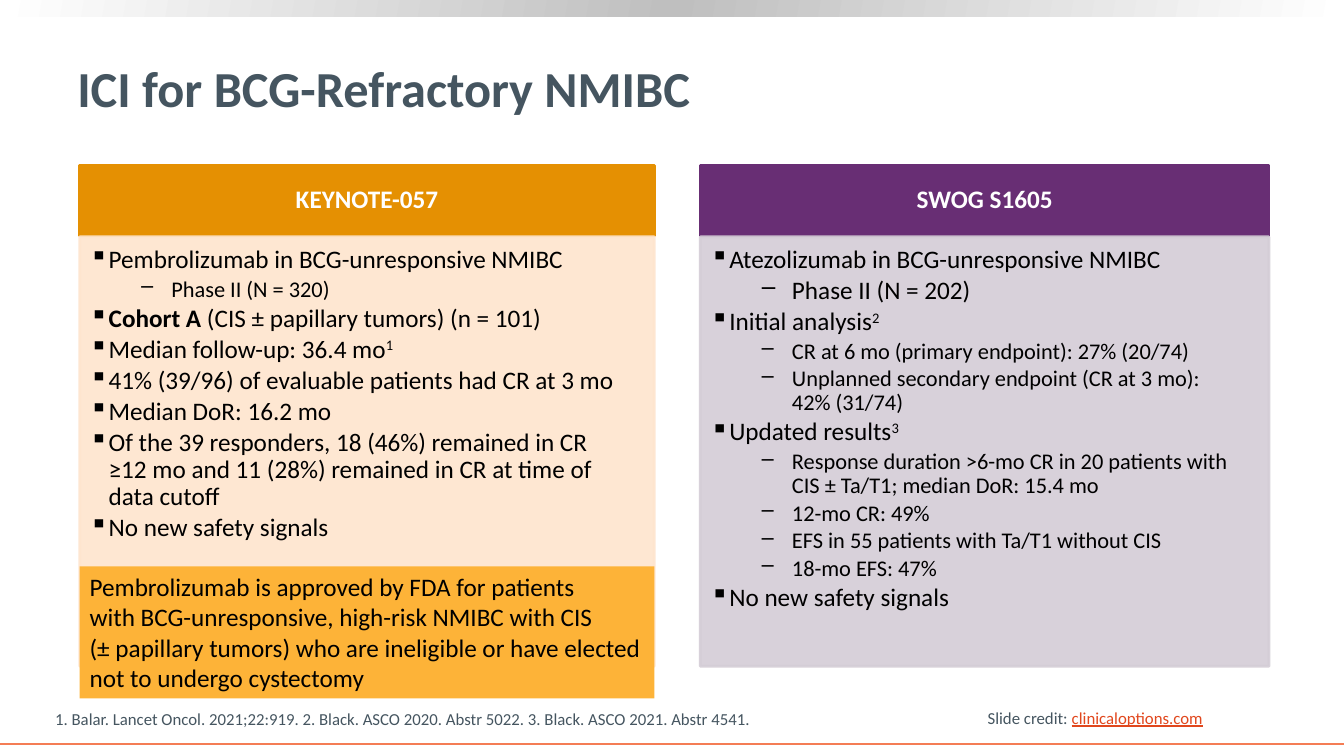
from lxml import etree
from pptx import Presentation
from pptx import util as u
from pptx.dml.color import RGBColor
from pptx.enum import shapes, text
from pptx.oxml import ns

FONT = "Calibri"
SLATE = "455560"
BULLETS = {1: ("▪", 0.48, 0.48), 2: ("‒", 2.06, 0.79)}
SUPERSCRIPT = {"superscript": True}

KEYNOTE_ITEMS = [
    (1, 18, [("Pembrolizumab in BCG-unresponsive NMIBC", {})]),
    (2, 16, [("Phase II (N = 320)", {})]),
    (1, 18, [("Cohort A ", {"bold": True}), ("(CIS ± papillary tumors) (n = 101)", {})]),
    (1, 18, [("Median follow-up: 36.4 mo", {}), ("1", SUPERSCRIPT)]),
    (1, 18, [("41% (39/96) of evaluable patients had CR at 3 mo", {})]),
    (1, 18, [("Median DoR: 16.2 mo", {})]),
    (1, 18, [("Of the 39 responders, 18 (46%) remained in CR \n"
              "≥12 mo and 11 (28%) remained in CR at time of data cutoff", {})]),
    (1, 18, [("No new safety signals", {})]),
]
SWOG_ITEMS = [
    (1, 18, [("Atezolizumab in BCG-unresponsive NMIBC", {})]),
    (2, 18, [("Phase II (N = 202)", {})]),
    (1, 18, [("Initial analysis", {}), ("2", SUPERSCRIPT)]),
    (2, 16, [("CR at 6 mo (primary endpoint): 27% (20/74)", {})]),
    (2, 16, [("Unplanned secondary endpoint (CR at 3 mo): \n42% (31/74)", {})]),
    (1, 18, [("Updated results", {}), ("3", SUPERSCRIPT)]),
    (2, 16, [("Response duration >6-mo CR in 20 patients with "
              "CIS ± Ta/T1; median DoR: 15.4 mo", {})]),
    (2, 16, [("12-mo CR: 49%", {})]),
    (2, 16, [("EFS in 55 patients with Ta/T1 without CIS", {})]),
    (2, 16, [("18-mo EFS: 47%", {})]),
    (1, 18, [("No new safety signals", {})]),
]
APPROVAL = ("Pembrolizumab is approved by FDA for patients \n"
            "with BCG-unresponsive, high-risk NMIBC with CIS \n"
            "(± papillary tumors) who are ineligible or have elected not to undergo cystectomy")
REFERENCES = ("1. Balar. Lancet Oncol.\u00a02021;22:919. 2. Black. ASCO 2020. Abstr 5022. "
              "3. Black. ASCO 2021. Abstr 4541.")


def color(value):
    return RGBColor.from_string(value)


def add_text(paragraph, content, size=18, hex_color="000000", bold=False,
             underline=False, superscript=False):
    for index, line in enumerate(content.split("\n")):
        if index:
            paragraph.add_line_break()
        run = paragraph.add_run()
        run.text = line
        run.font.name = FONT
        run.font.size = u.Pt(size)
        run.font.bold = bold
        run.font.underline = underline
        run.font.color.rgb = color(hex_color)
        if superscript:
            run._r.get_or_add_rPr().set("baseline", "30000")


def set_frame(shape, anchor=text.MSO_ANCHOR.TOP, insets=(0.25, 0.13, 0.25, 0.13), wrap=True):
    frame = shape.text_frame
    frame.word_wrap = wrap
    frame.vertical_anchor = anchor
    frame.margin_left, frame.margin_top, frame.margin_right, frame.margin_bottom = map(u.Cm, insets)
    paragraph = frame.paragraphs[0]
    paragraph.alignment = text.PP_ALIGN.LEFT
    return paragraph


def add_text_box(slide, box, **frame_format):
    shape = slide.shapes.add_textbox(*map(u.Cm, box))
    return set_frame(shape, **frame_format)


def add_rectangle(slide, box, fill, outlined=False, opacity=100):
    shape = slide.shapes.add_shape(shapes.MSO_SHAPE.RECTANGLE, *map(u.Cm, box))
    shape.shadow.inherit = False
    shape.fill.solid()
    shape.fill.fore_color.rgb = color(fill)
    if outlined:
        shape.line.color.rgb = color(fill)
        shape.line.width = u.Pt(2)
    else:
        shape.line.fill.background()
    if opacity < 100:
        for element in shape._element.spPr.iter(ns.qn("a:srgbClr")):
            etree.SubElement(element, ns.qn("a:alpha")).set("val", str(opacity * 1000))
    return shape


def add_top_band(slide):
    band = add_rectangle(slide, (0, 0, 33.87, 0.41), "BFBFBF")
    band.fill.gradient()
    gradient = band._element.spPr.find(ns.qn("a:gradFill"))
    for child in list(gradient):
        gradient.remove(child)
    stops = etree.SubElement(gradient, ns.qn("a:gsLst"))
    for position, value in ((0, "FFFFFF"), (50, "BFBFBF"), (100, "FFFFFF")):
        stop = etree.SubElement(stops, ns.qn("a:gs"), pos=str(position * 1000))
        etree.SubElement(stop, ns.qn("a:srgbClr"), val=value)
    etree.SubElement(gradient, ns.qn("a:lin"), ang=str(190 * 60000), scaled="0")


def add_bottom_rule(slide):
    rule = slide.shapes.add_connector(shapes.MSO_CONNECTOR.STRAIGHT, 0, u.Cm(18.75),
                                      u.Cm(33.87), u.Cm(18.75))
    rule.line.color.rgb = color("F47D55")
    rule.line.width = u.Pt(1.5)
    etree.SubElement(rule._element.spPr, ns.qn("a:effectLst"))


def set_bullet(paragraph, level):
    character, margin, hanging = BULLETS[level]
    paragraph.level = level
    properties = paragraph._p.get_or_add_pPr()
    properties.set("marL", str(u.Cm(margin)))
    properties.set("indent", str(-u.Cm(hanging)))
    etree.SubElement(properties, ns.qn("a:buChar"), char=character)


def add_trial(slide, left, width, heading, items, dark, light):
    header = add_rectangle(slide, (left, 4.17, width, 1.78), dark, outlined=True)
    paragraph = set_frame(header, text.MSO_ANCHOR.MIDDLE, (0.36, 0.2, 0.36, 0.2))
    paragraph.alignment = text.PP_ALIGN.CENTER
    paragraph.line_spacing = 0.9
    add_text(paragraph, heading, hex_color="FFFFFF", bold=True)

    body = add_rectangle(slide, (left, 5.97, width, 10.82), light, outlined=True, opacity=90)
    first = set_frame(body, insets=(0.25, 0.25, 0.36, 0.4))
    for index, (level, size, runs) in enumerate(items):
        paragraph = body.text_frame.add_paragraph() if index else first
        paragraph.alignment = text.PP_ALIGN.LEFT
        set_bullet(paragraph, level)
        paragraph.line_spacing = 0.9
        paragraph.space_after = u.Pt(size * 0.15)
        for content, run_format in runs:
            add_text(paragraph, content, size=size, **run_format)


def main():
    presentation = Presentation()
    presentation.slide_width = u.Cm(33.87)
    presentation.slide_height = u.Cm(19.05)
    slide = presentation.slides.add_slide(presentation.slide_layouts[6])

    add_top_band(slide)
    add_bottom_rule(slide)
    credit = add_text_box(slide, (24.64, 17.7, 5.99, 0.76), wrap=False)
    add_text(credit, "Slide credit: ", size=12, hex_color=SLATE)
    add_text(credit, "clinicaloptions.com", size=12, hex_color="E1471D", underline=True)

    title = add_text_box(slide, (1.7, 0.66, 30.2, 3.07), anchor=text.MSO_ANCHOR.MIDDLE)
    add_text(title, "ICI for BCG-Refractory NMIBC", size=36, hex_color=SLATE, bold=True)

    add_trial(slide, 2.01, 14.48, "KEYNOTE-057", KEYNOTE_ITEMS, "E59002", "FEE5CE")
    add_trial(slide, 17.65, 14.33, "SWOG S1605", SWOG_ITEMS, "682E74", "D4CDD6")

    approval = add_rectangle(slide, (2.01, 14.27, 14.48, 3.33), "FDB338")
    add_text(set_frame(approval), APPROVAL)
    references = add_text_box(slide, (1.14, 17.73, 22.25, 0.76), anchor=text.MSO_ANCHOR.BOTTOM)
    add_text(references, REFERENCES, size=12, hex_color=SLATE)

    presentation.save("out.pptx")


if __name__ == "__main__":
    main()
